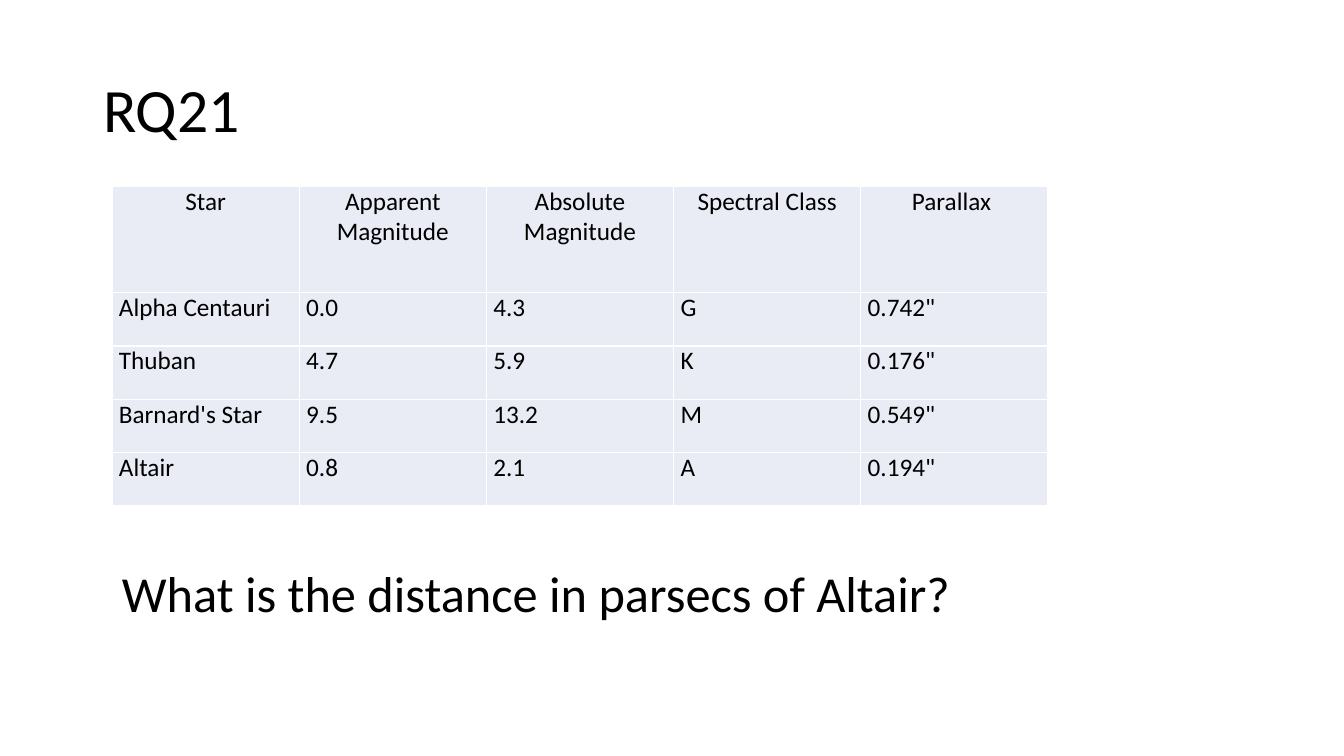
from lxml.etree import SubElement as Sub
from pptx import Presentation
from pptx.dml.color import RGBColor as RGB
from pptx.enum.text import MSO_ANCHOR as Anchor, MSO_AUTO_SIZE as Fit, PP_ALIGN as Align
from pptx.oxml.ns import qn
from pptx.util import Pt

# Content
TITLE = "RQ21"
QUERY = "What is the distance in parsecs of Altair?"
STARS = [
    ("Star", "Apparent Magnitude", "Absolute Magnitude", "Spectral Class", "Parallax "),
    ("Alpha Centauri", "0.0", "4.3", "G", '0.742"'),
    ("Thuban", "4.7", "5.9", "K", '0.176"'),
    ("Barnard's Star", "9.5", "13.2", "M", '0.549"'),
    ("Altair", "0.8", "2.1", "A", '0.194"'),
]

# Look and places in px: left, top, width, height
FONT = "Calibri"
BLACK = RGB(0, 0, 0)
WHITE = RGB(255, 255, 255)
PALE = RGB(0xE9, 0xEB, 0xF5)
SLIDE = (1344, 756)
TITLE_BOX = (93, 40, 1159, 146)
GRID_BOX = (112, 186, 936, 320)
QUERY_BOX = (112, 557, 977, 71)
INSET = 7


def px(n):
    return round(n * 914400 / 100.8)


def write(frame, text, size, align=Align.LEFT):
    para = frame.paragraphs[0]
    para.alignment = align
    run = para.add_run()
    run.text = text
    font = run.font
    font.name, font.size, font.color.rgb = FONT, Pt(size), BLACK
    return para


def edge(cell):
    props = cell._tc.get_or_add_tcPr()
    for side in ("lnL", "lnR", "lnT", "lnB"):
        line = Sub(props, qn("a:" + side), w=str(Pt(1)))
        fill = Sub(line, qn("a:solidFill"))
        Sub(fill, qn("a:srgbClr"), val=str(WHITE))


deck = Presentation()
deck.slide_width, deck.slide_height = map(px, SLIDE)
slide = deck.slides.add_slide(deck.slide_layouts[5])

# Title
title = slide.shapes.title
title.left, title.top, title.width, title.height = map(px, TITLE_BOX)
frame = title.text_frame
frame.auto_size = Fit.NONE
frame.vertical_anchor = Anchor.MIDDLE
write(frame, TITLE, 44).line_spacing = 0.9

# Star table: the header is two rows tall
rows, cols = len(STARS), len(STARS[0])
table = slide.shapes.add_table(rows, cols, *map(px, GRID_BOX)).table
wide, tall = GRID_BOX[2] / cols, GRID_BOX[3] / (rows + 1)
for col in table.columns:
    col.width = px(wide)
for r, star in enumerate(STARS):
    table.rows[r].height = px(tall if r else 2 * tall)
    for c, text in enumerate(star):
        cell = table.cell(r, c)
        cell.margin_left = cell.margin_right = px(INSET)
        cell.margin_top = cell.margin_bottom = 0
        edge(cell)
        cell.fill.solid()
        cell.fill.fore_color.rgb = PALE
        write(cell.text_frame, text, 18, Align.LEFT if r else Align.CENTER)

# Question
frame = slide.shapes.add_textbox(*map(px, QUERY_BOX)).text_frame
frame.word_wrap = True
frame.auto_size = Fit.SHAPE_TO_FIT_TEXT
write(frame, QUERY, 36)

deck.save("out.pptx")
